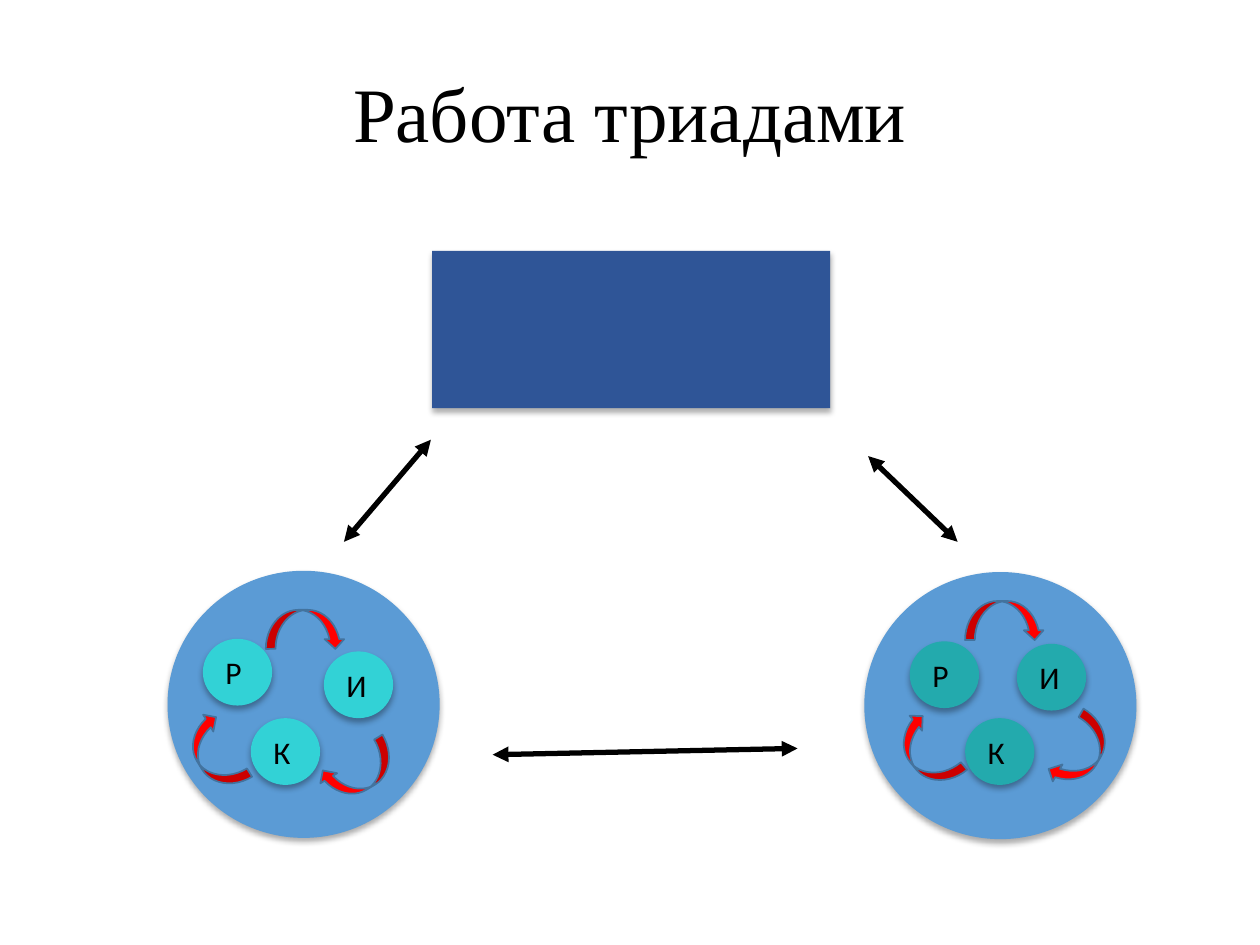
from dataclasses import dataclass

from lxml.etree import SubElement
from pptx import Presentation
from pptx.dml.color import RGBColor
from pptx.enum.shapes import MSO_CONNECTOR, MSO_SHAPE
from pptx.enum.text import MSO_ANCHOR, PP_ALIGN
from pptx.oxml.ns import qn
from pptx.util import Inches, Pt


@dataclass(frozen=True)
class Theme:
    ink: str = "000000"
    panel: str = "2F5597"
    group: str = "5B9BD5"
    arrow: str = "FF0000"
    arrow_edge: str = "43739E"
    title_font: str = "Times New Roman"
    body_font: str = "Calibri"
    title_size: int = 44
    letter_size: int = 18
    link_width: int = 3
    edge_width: int = 1


THEME = Theme()
TITLE = "Работа триадами"
TITLE_BOX = (0.69, 0.4, 8.62, 1.07)
PANEL_BOX = (3.43, 1.99, 3.16, 1.25)
GROUP_SIZE = (2.16, 2.12)
MEMBER_SIZE = (0.55, 0.53)
TURN_SIZE = (0.63, 0.31)

TRIADS = [
    {
        "corner": (6.86, 4.54),
        "color": "23AAAD",
        "members": [("Р", 7.22, 5.09), ("И", 8.07, 5.11), ("К", 7.66, 5.7)],
        "turns": [(7.66, 4.77, 0), (8.26, 5.82, 120), (7.04, 5.81, 230.3)],
    },
    {
        "corner": (1.33, 4.53),
        "color": "32D2D6",
        "members": [("Р", 1.61, 5.07), ("И", 2.57, 5.17), ("К", 1.99, 5.7)],
        "turns": [(2.11, 4.84, 0), (2.53, 5.97, 149), (1.39, 5.82, 238.9)],
    },
]
LINKS = [
    (3.42, 3.49, 2.73, 4.3),
    (7.6, 4.3, 6.89, 3.62),
    (6.33, 5.94, 3.91, 5.99),
]


def write(frame, text, font, size, align, spacing=None):
    frame.vertical_anchor = MSO_ANCHOR.MIDDLE
    para = frame.paragraphs[0]
    para.alignment = align
    para.line_spacing = spacing
    span = para.add_run()
    span.text = text
    span.font.name = font
    span.font.size = Pt(size)
    span.font.color.rgb = RGBColor.from_string(THEME.ink)


def add_shadow(shape):
    effects = shape._element.spPr.find(qn("a:effectLst"))
    shadow = SubElement(effects, qn("a:outerShdw"), blurRad=str(Pt(3.5)), dist=str(Pt(2.2)),
                        dir="5400000", algn="t", rotWithShape="0")
    color = SubElement(shadow, qn("a:srgbClr"), val=THEME.ink)
    SubElement(color, qn("a:alpha"), val="32000")


def add_figure(page, kind, box, fill, edge=None, rotation=0):
    shape = page.shapes.add_shape(kind, *map(Inches, box))
    shape.rotation = rotation
    shape.fill.solid()
    shape.fill.fore_color.rgb = RGBColor.from_string(fill)
    shape.shadow.inherit = False
    if edge:
        shape.line.color.rgb = RGBColor.from_string(edge)
        shape.line.width = Pt(THEME.edge_width)
    else:
        shape.line.fill.background()
        add_shadow(shape)
    return shape


def add_link(page, points):
    link = page.shapes.add_connector(MSO_CONNECTOR.STRAIGHT, *map(Inches, points))
    link.line.color.rgb = RGBColor.from_string(THEME.ink)
    link.line.width = Pt(THEME.link_width)
    properties = link._element.spPr
    for end in ("a:headEnd", "a:tailEnd"):
        SubElement(properties.find(qn("a:ln")), qn(end), type="triangle")
    SubElement(properties, qn("a:effectLst"))


def add_triad(page, triad):
    add_figure(page, MSO_SHAPE.OVAL, triad["corner"] + GROUP_SIZE, THEME.group)
    for letter, left, top in triad["members"]:
        member = add_figure(page, MSO_SHAPE.OVAL, (left, top) + MEMBER_SIZE, triad["color"])
        member.text_frame.word_wrap = False
        write(member.text_frame, letter, THEME.body_font, THEME.letter_size, PP_ALIGN.LEFT)
    for left, top, rotation in triad["turns"]:
        add_figure(page, MSO_SHAPE.CURVED_DOWN_ARROW, (left, top) + TURN_SIZE,
                   THEME.arrow, edge=THEME.arrow_edge, rotation=rotation)


def main():
    """Build the slide that shows two triads linked to a shared panel."""
    deck = Presentation()
    deck.slide_width, deck.slide_height = Inches(10), Inches(7.5)
    page = deck.slides.add_slide(deck.slide_layouts[5])
    title = page.shapes.title
    title.left, title.top, title.width, title.height = map(Inches, TITLE_BOX)
    write(title.text_frame, TITLE, THEME.title_font, THEME.title_size, PP_ALIGN.CENTER, spacing=0.9)
    add_figure(page, MSO_SHAPE.RECTANGLE, PANEL_BOX, THEME.panel)
    for triad in TRIADS:
        add_triad(page, triad)
    for points in LINKS:
        add_link(page, points)
    deck.save("out.pptx")


if __name__ == "__main__":
    main()
